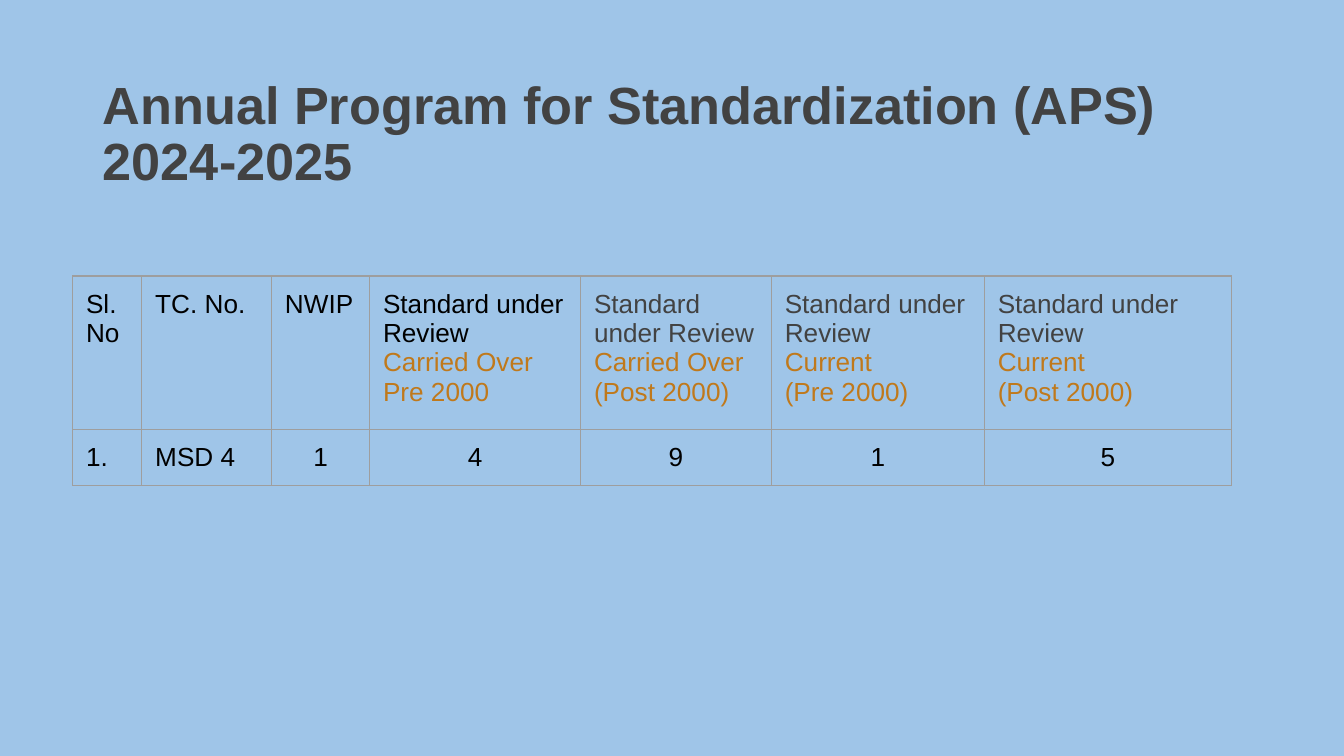
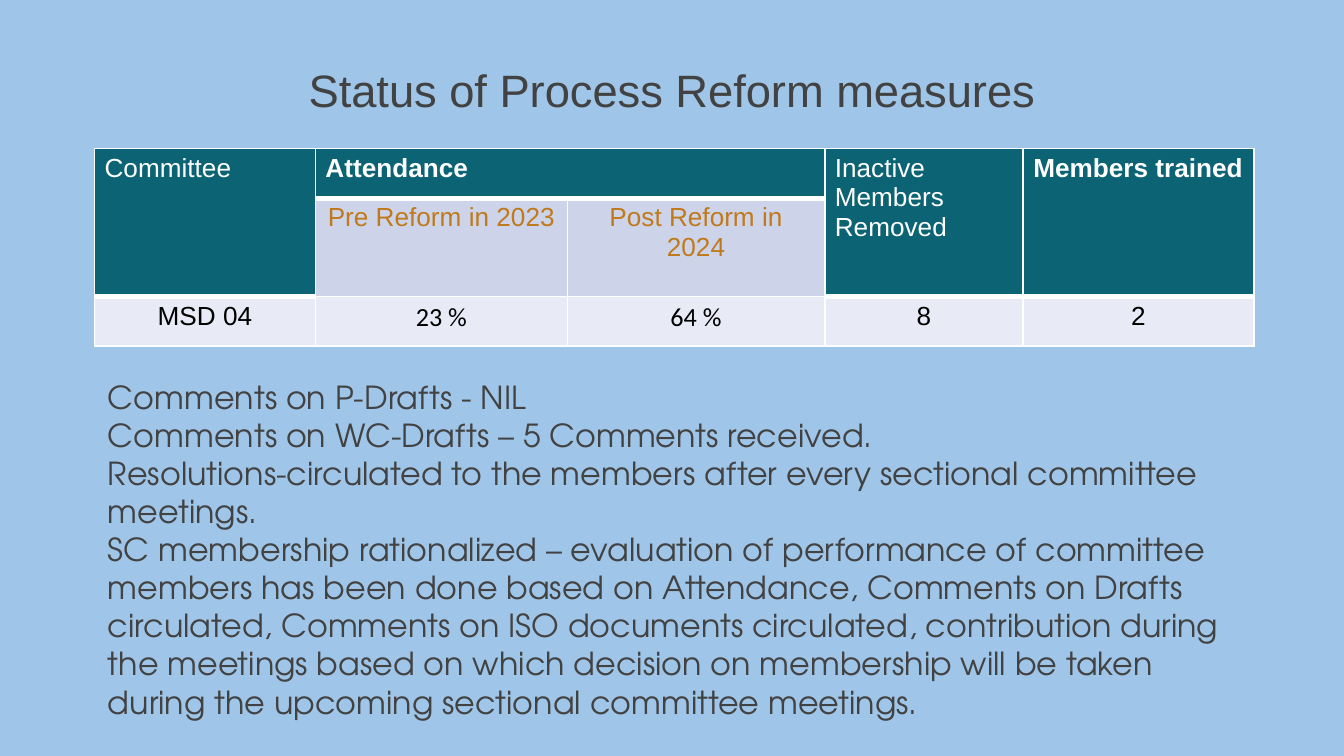
from lxml import etree
from pptx import Presentation
from pptx.dml.color import RGBColor as Color
from pptx.enum.text import MSO_ANCHOR as Anchor, MSO_AUTO_SIZE as Fit, PP_ALIGN as Align
from pptx.oxml.ns import qn
from pptx.util import Inches, Pt

HUES = {
    "sky": "9FC5E8",
    "dark": "424242",
    "gold": "C0791B",
    "black": "000000",
    "white": "FFFFFF",
    "gray": "9E9E9E",
    "teal": "0B6374",
    "lilac": "CDD4EA",
    "pale": "E8EBF5",
}

deck = Presentation()
deck.slide_width = Inches(10)
deck.slide_height = deck.slide_width * 9 // 16
unit = deck.slide_width // 100
back = deck.slide_master.background.fill
back.solid()
back.fore_color.rgb = Color.from_string(HUES["sky"])


def write(frame, text, size=14, font="Arial", hue="black", tail=None,
          bold=False, align=Align.LEFT, space=1.0):
    for i, line in enumerate(text.split("\n")):
        para = frame.add_paragraph() if i else frame.paragraphs[0]
        para.alignment = align
        para.line_spacing = space
        para.space_before = para.space_after = Pt(0)
        run = para.add_run()
        run.text = line
        run.font.size = Pt(size)
        run.font.name = font
        run.font.bold = bold
        run.font.color.rgb = Color.from_string(HUES[tail if i and tail else hue])


def grid(slide, left, top, cols, rows, fills, pads, line, thin):
    table = slide.shapes.add_table(
        len(rows), len(cols), int(left * unit), int(top * unit),
        int(sum(cols) * unit), int(sum(rows) * unit)).table
    table.first_row = table.horz_banding = False
    for col, size in zip(table.columns, cols):
        col.width = int(size * unit)
    for r, size in enumerate(rows):
        table.rows[r].height = int(size * unit)
        for c in range(len(cols)):
            cell = table.cell(r, c)
            cell.margin_left = cell.margin_right = Pt(pads[0])
            cell.margin_top = cell.margin_bottom = Pt(pads[1])
            cell.vertical_anchor = Anchor.TOP
            if fills[r][c]:
                cell.fill.solid()
                cell.fill.fore_color.rgb = Color.from_string(HUES[fills[r][c]])
            else:
                cell.fill.background()
            thick = {"T": r > 0 and fills[r - 1][c] == "teal",
                     "B": fills[r][c] == "teal"}
            props = cell._tc.get_or_add_tcPr()
            for i, side in enumerate("LRTB"):
                edge = etree.Element(qn(f"a:ln{side}"))
                edge.set("w", str(Pt(3 if thick.get(side) else thin)))
                solid = etree.SubElement(edge, qn("a:solidFill"))
                etree.SubElement(solid, qn("a:srgbClr")).set("val", HUES[line])
                props.insert(i, edge)
    return table


slides = []
for text, top, high, look in [
    ("Annual Program for Standardization (APS) 2024-2025", 4.65, 10.9,
     {"size": 28, "bold": True}),
    ("Status of Process Reform measures", 5.05, 3.7,
     {"size": 24.3, "align": Align.CENTER}),
]:
    slide = deck.slides.add_slide(deck.slide_layouts[5])
    title = slide.shapes.title
    title.left, title.top = int(6.9 * unit), int(top * unit)
    title.width, title.height = int(86.2 * unit), int(high * unit)
    frame = title.text_frame
    frame.auto_size = Fit.NONE
    frame.word_wrap = True
    frame.vertical_anchor = Anchor.MIDDLE
    frame.margin_left = frame.margin_right = Pt(5.4)
    frame.margin_top = frame.margin_bottom = Pt(2.7)
    write(frame, text, hue="dark", space=0.9, **look)
    slides.append(slide)
plan, reform = slides

table = grid(plan, 5.4, 20.54, [5.15, 9.65, 7.3, 15.7, 14.2, 15.85, 18.4], [11.4, 4.2],
             [[None] * 7] * 2, (7.2, 7.2), "gray", 0.75)
heads = ["Sl. No", "TC. No.", "NWIP",
         "Standard under Review\nCarried Over\nPre 2000",
         "Standard under Review\nCarried Over\n(Post 2000)",
         "Standard under Review\nCurrent\n(Pre 2000)",
         "Standard under Review\nCurrent\n(Post 2000)"]
for c, text in enumerate(heads):
    write(table.cell(0, c).text_frame, text, tail="gold",
          hue="dark" if c > 3 else "black")
for c, text in enumerate(["1.", "MSD 4", "1", "4", "9", "1", "5"]):
    write(table.cell(1, c).text_frame, text,
          align=Align.CENTER if c > 1 else Align.LEFT)

table = grid(reform, 7.03, 11.05, [16.44, 18.75, 19.15, 14.77, 17.15], [3.7, 6.4, 3.7],
             [["teal"] * 5,
              ["teal", "lilac", "lilac", "teal", "teal"],
              ["pale"] * 5], (5.4, 2.7), "white", 1)
for c in (0, 3, 4):
    table.cell(0, c).merge(table.cell(1, c))
table.cell(0, 1).merge(table.cell(0, 2))
for c, text, bold in [(0, "Committee", False), (1, "Attendance", True),
                      (3, "Inactive Members Removed", False),
                      (4, "Members trained", True)]:
    write(table.cell(0, c).text_frame, text, hue="white", bold=bold)
for c, text in enumerate(["Pre Reform in 2023", "Post Reform in 2024"], 1):
    write(table.cell(1, c).text_frame, text, hue="gold", align=Align.CENTER)
for c, text in enumerate(["MSD 04", "23 %", "64 %", "8", "2"]):
    cell = table.cell(2, c)
    look = {}
    if "%" in text:
        cell.margin_left = cell.margin_right = Pt(4.3)
        cell.margin_top = cell.margin_bottom = 0
        look = {"font": "Calibri", "space": 1.15}
    write(cell.text_frame, text, align=Align.CENTER, **look)

notes = [
    "Comments on P-Drafts - NIL",
    "Comments on WC-Drafts – 5 Comments received.",
    "Resolutions-circulated to the members after every sectional committee meetings.",
    "SC membership rationalized – evaluation of performance of committee members "
    "has been done based on Attendance, Comments on Drafts circulated, Comments on "
    "ISO documents circulated, contribution during the meetings based on which "
    "decision on membership will be taken during the upcoming sectional committee "
    "meetings.",
]
box = reform.shapes.add_textbox(int(7.05 * unit), int(27.1 * unit),
                                int(86.2 * unit), int(26.4 * unit))
frame = box.text_frame
frame.word_wrap = True
frame.margin_left = frame.margin_right = unit
frame.margin_top = frame.margin_bottom = unit
write(frame, "\n".join(notes), size=17, font="TeX Gyre Adventor", hue="dark")

deck.save("out.pptx")
